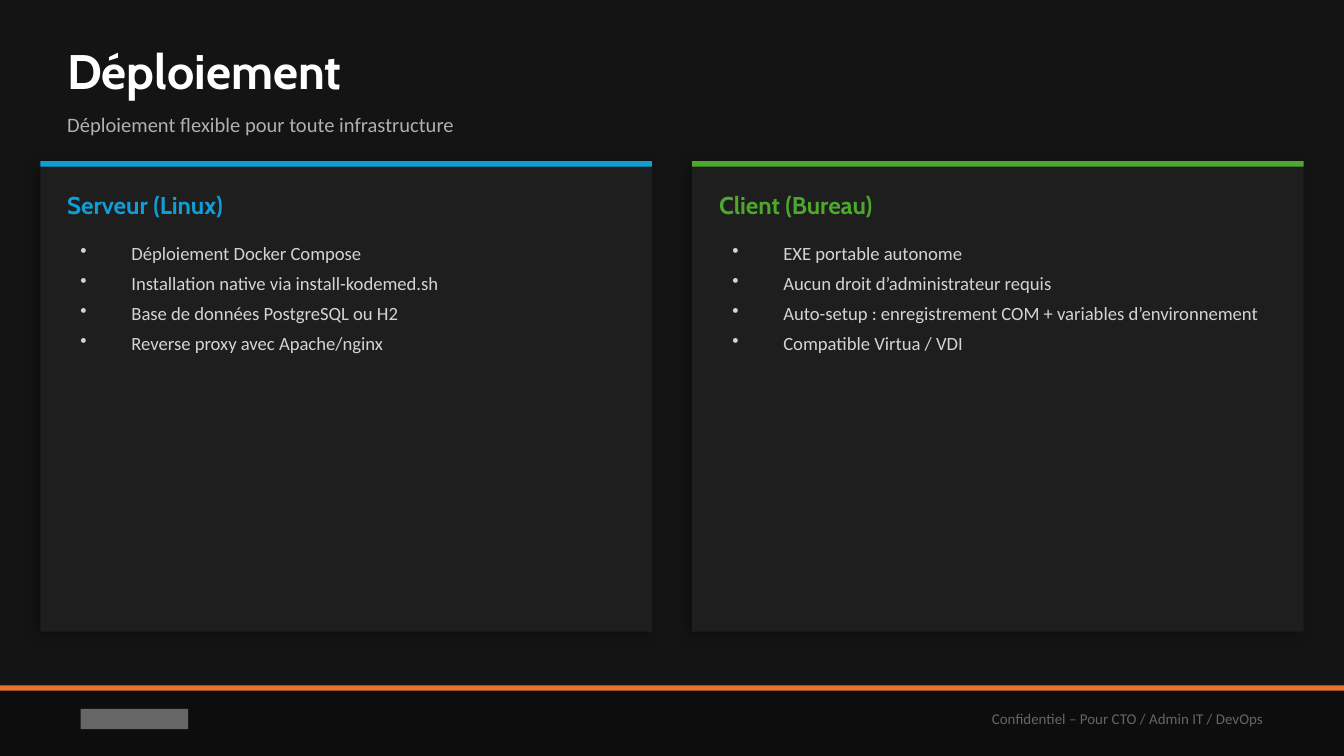
from lxml import etree
from pptx import Presentation
from pptx import util as u
from pptx.dml.color import RGBColor
from pptx.enum import shapes, text
from pptx.oxml import ns

CELL = 0.05
COLS, ROWS = 200, 112.5
RULE = 0.8
GREY = "666666"


def grid(*cells):
    """Turn grid cells into lengths."""
    return [u.Inches(n * CELL) for n in cells]


def paint(fill, hue):
    """Fill with one hex colour."""
    fill.solid()
    fill.fore_color.rgb = RGBColor.from_string(hue)


def node(parent, tag, **attrs):
    """Add a drawing element with its attributes."""
    return etree.SubElement(parent, ns.qn(tag), attrs)


def block(slide, box, hue, shade=False):
    """Draw a plain rectangle, with a soft shadow if asked."""
    rect = slide.shapes.add_shape(shapes.MSO_SHAPE.RECTANGLE, *grid(*box))
    rect.shadow.inherit = False
    paint(rect.fill, hue)
    rect.line.fill.background()
    if shade:
        glow = node(rect._element.spPr.find(ns.qn("a:effectLst")), "a:outerShdw",
                    blurRad=str(u.Pt(8)), dist=str(u.Pt(3)), dir=str(135 * 60000),
                    algn="bl", rotWithShape="0")
        node(node(glow, "a:srgbClr", val="000000"), "a:alpha", val="35000")


def bullet(para):
    """Give a paragraph a hanging bullet."""
    props = para._p.get_or_add_pPr()
    hang = u.Inches(0.38)
    props.set("marL", str(hang))
    props.set("indent", str(-hang))
    node(props, "a:buSzPct", val="100000")
    node(props, "a:buChar", char="•")


def write(slide, box, lines, size=11, hue="FFFFFF", font="Calibri", bold=False,
          align="LEFT", anchor="MIDDLE", inset=True, dots=False, after=0, shape=None):
    """Place lines of text in a new box or in the given shape."""
    if shape is None:
        shape = slide.shapes.add_textbox(*grid(*box))
    else:
        shape.left, shape.top, shape.width, shape.height = grid(*box)
    frame = shape.text_frame
    frame.word_wrap = True
    frame.auto_size = text.MSO_AUTO_SIZE.NONE
    frame.vertical_anchor = getattr(text.MSO_ANCHOR, anchor)
    if not inset:
        frame.margin_left = frame.margin_right = 0
        frame.margin_top = frame.margin_bottom = 0
    for i, line in enumerate(lines):
        para = frame.add_paragraph() if i else frame.paragraphs[0]
        para.alignment = getattr(text.PP_ALIGN, align)
        para.space_after = u.Pt(after)
        if dots:
            bullet(para)
        run = para.add_run()
        run.text = line
        run.font.name = font
        run.font.size = u.Pt(size)
        run.font.bold = bold
        run.font.color.rgb = RGBColor.from_string(hue)


def header(slide, box, title, sub):
    """Place the title and the subtitle below it."""
    left, top, wide, high = box
    write(slide, (left, top, wide, 11), [title], size=26, font="Cabin", bold=True,
          inset=False, shape=slide.shapes.title)
    write(slide, (left, top + high - 7, wide, 7), [sub], hue="B0B0B0", inset=False)


def card(slide, box, hue, head, items):
    """Draw a card with a coloured rule, a heading and a bullet list."""
    left, top, wide, high = box
    pad = 4
    inner = wide - 2 * pad
    block(slide, box, "1E1E1E", shade=True)
    block(slide, (left, top, wide, RULE), hue)
    write(slide, (left + pad, top + 3, inner, 7), [head], size=13, hue=hue,
          font="Cabin", bold=True, inset=False)
    write(slide, (left + pad, top + 11, inner, high - 14), items, size=10,
          hue="D4D4D4", anchor="TOP", dots=True, after=4)


def footer(slide, box, note):
    """Draw the bottom band with a plain mark and a note."""
    left, top, wide, high = box
    block(slide, box, "0D0D0D")
    block(slide, (left, top, wide, RULE), "E97132")
    block(slide, (left + 12, top + 3.5, 16, 3), GREY)
    write(slide, (left + wide - 90, top + 1, 80, 8), [note], size=8, hue=GREY,
          align="RIGHT")


def main():
    """Build and save the slide."""
    deck = Presentation()
    deck.slide_width, deck.slide_height = grid(COLS, ROWS)
    slide = deck.slides.add_slide(deck.slide_layouts[5])
    paint(slide.background.fill, "141414")
    footer(slide, (0, 102, COLS, ROWS - 102),
           "Confidentiel – Pour CTO / Admin IT / DevOps")
    header(slide, (10, 5, 180, 17), "Déploiement",
           "Déploiement flexible pour toute infrastructure")
    cards = [
        ("0F9ED5", "Serveur (Linux)",
         ["Déploiement Docker Compose",
          "Installation native via install-kodemed.sh",
          "Base de données PostgreSQL ou H2",
          "Reverse proxy avec Apache/nginx"]),
        ("4EA72E", "Client (Bureau)",
         ["EXE portable autonome",
          "Aucun droit d’administrateur requis",
          "Auto-setup : enregistrement COM + variables d’environnement",
          "Compatible Virtua / VDI"]),
    ]
    edge, gap = 6, 6
    wide = (COLS - 2 * edge - gap * (len(cards) - 1)) / len(cards)
    for i, parts in enumerate(cards):
        card(slide, (edge + i * (wide + gap), 24, wide, 70), *parts)
    deck.save("out.pptx")


if __name__ == "__main__":
    main()
